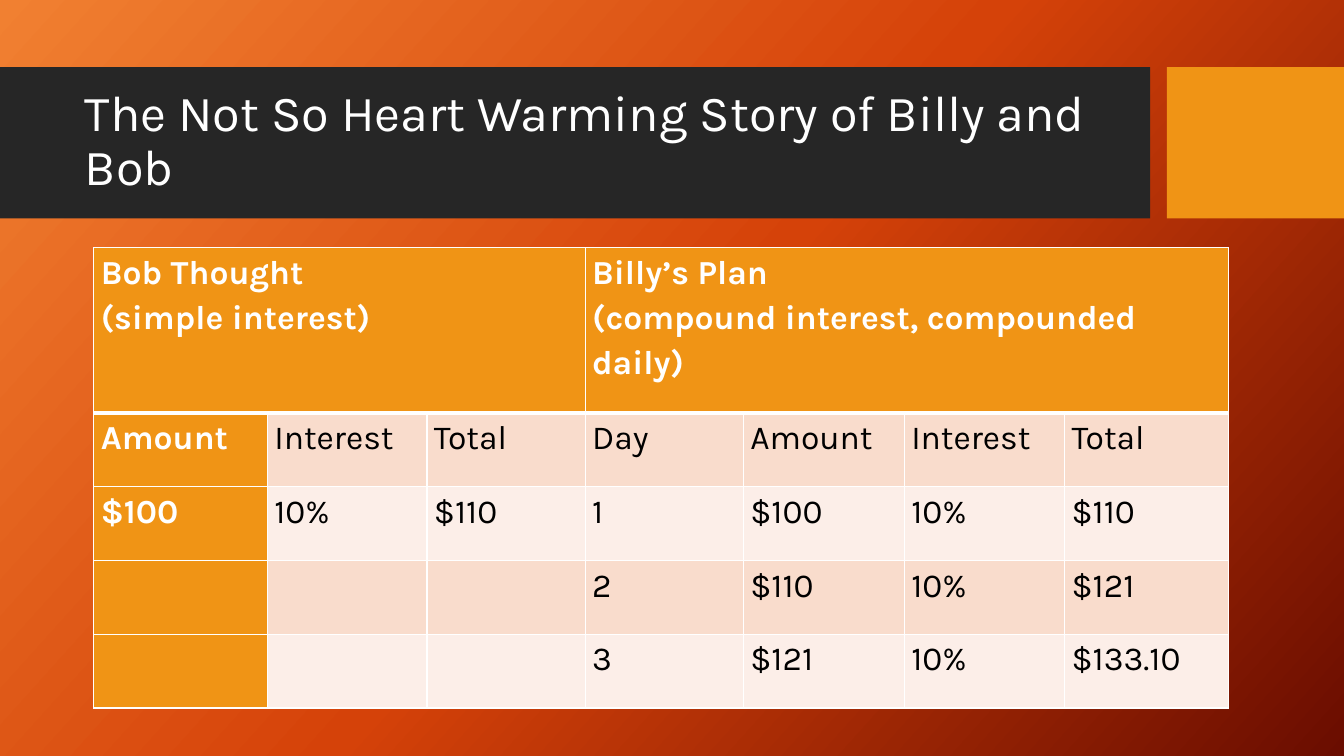
from copy import deepcopy
from typing import NamedTuple

from lxml.etree import SubElement as Sub
from pptx import Presentation
from pptx.dml.color import RGBColor as RGB
from pptx.enum.shapes import MSO_SHAPE as Shape
from pptx.enum.text import MSO_ANCHOR as Anchor, MSO_AUTO_SIZE as Auto, PP_ALIGN as Align
from pptx.oxml.ns import qn
from pptx.util import Pt

HUES = {
    "white": "FFFFFF", "black": "000000", "char": "262626", "gold": "F09415",
    "peach": "F9DCCC", "blush": "FCEEE8",
    "dawn": "F18031", "flame": "D54209", "ember": "6A0D00",
}
FONT = "Karla"
WIDTHS = [124, 114, 113, 113, 115, 114.5, 117]
HEIGHTS = [118] + [52.7] * 4
ROWS = [
    ["Amount", "Interest", "Total", "Day", "Amount", "Interest", "Total"],
    ["$100", "10%", "$110", "1", "$100", "10%", "$110"],
    ["", "", "", "2", "$110", "10%", "$121"],
    ["", "", "", "3", "$121", "10%", "$133.10"],
]


class Bar(NamedTuple):
    left: float
    width: float
    hue: str


class Head(NamedTuple):
    first: int
    last: int
    lines: list[str]


BARS = [Bar(0, 821.5, "char"), Bar(833.5, 126.5, "gold")]
HEADS = [
    Head(0, 2, ["Bob Thought", "(simple interest)"]),
    Head(3, 6, ["Billy’s Plan", "(compound interest, compounded daily)"]),
]


def tint(hue: str) -> RGB:
    return RGB.from_string(HUES[hue])


def write(para, text: str, size: float, hue: str, bold: bool, gap: float) -> None:
    para.line_spacing = gap
    para.alignment = Align.LEFT
    run = para.add_run()
    run.text = text
    font = run.font
    font.name, font.size, font.bold = FONT, Pt(size), bold
    font.color.rgb = tint(hue)


def paint(slide) -> None:
    fill = slide.background.fill
    fill.gradient()
    fill.gradient_angle = 318
    stops = next(slide.element.iter(qn("a:gsLst")))
    stops.insert(1, deepcopy(stops[0]))
    for stop, hue, spot in zip(fill.gradient_stops, ["dawn", "flame", "ember"], [0, 0.5, 1]):
        stop.color.rgb = tint(hue)
        stop.position = spot


def draw_bar(slide, bar: Bar) -> None:
    box = slide.shapes.add_shape(Shape.RECTANGLE, Pt(bar.left), Pt(48), Pt(bar.width), Pt(108))
    box.shadow.inherit = False
    box.fill.solid()
    box.fill.fore_color.rgb = tint(bar.hue)
    box.line.fill.background()


def set_title(slide, text: str) -> None:
    title = slide.shapes.title
    slide.shapes.element.append(title.element)
    title.left, title.top, title.width, title.height = Pt(53.5), Pt(59), Pt(756.5), Pt(85)
    frame = title.text_frame
    frame.word_wrap = True
    frame.auto_size = Auto.NONE
    frame.vertical_anchor = Anchor.MIDDLE
    write(frame.paragraphs[0], text, 36, "white", False, 0.9)


def edge(cell, row: int) -> None:
    props = cell._tc.get_or_add_tcPr()
    thick = {0: "B", 1: "T"}.get(row)
    for side in "LRTB":
        width = 3 if side == thick else 1
        line = Sub(props, qn(f"a:ln{side}"), w=str(Pt(width)))
        Sub(Sub(line, qn("a:solidFill")), qn("a:srgbClr"), val=HUES["white"])


def style(cell, row: int, col: int) -> None:
    edge(cell, row)
    cell.margin_left = cell.margin_right = Pt(5)
    cell.margin_top = cell.margin_bottom = 0
    cell.fill.solid()
    band = "peach" if row % 2 else "blush"
    cell.fill.fore_color.rgb = tint("gold" if row == 0 or col == 0 else band)


def fill_cell(cell, lines: list[str], bold: bool) -> None:
    frame = cell.text_frame
    for i, text in enumerate(lines):
        para = frame.add_paragraph() if i else frame.paragraphs[0]
        write(para, text, 24, "white" if bold else "black", bold, 1.15)


def draw_table(slide) -> None:
    table = slide.shapes.add_table(
        len(HEIGHTS), len(WIDTHS), Pt(67), Pt(177), Pt(sum(WIDTHS)), Pt(sum(HEIGHTS))
    ).table
    for col, width in zip(table.columns, WIDTHS):
        col.width = Pt(width)
    for row, height in zip(table.rows, HEIGHTS):
        row.height = Pt(height)
    for r in range(len(HEIGHTS)):
        for c in range(len(WIDTHS)):
            style(table.cell(r, c), r, c)
    for head in HEADS:
        cell = table.cell(0, head.first)
        cell.merge(table.cell(0, head.last))
        fill_cell(cell, head.lines, True)
    for r, texts in enumerate(ROWS, 1):
        for c, text in enumerate(texts):
            if text:
                fill_cell(table.cell(r, c), [text], c == 0)


def main() -> None:
    deck = Presentation()
    deck.slide_width, deck.slide_height = Pt(960), Pt(540)
    slide = deck.slides.add_slide(deck.slide_layouts[5])
    paint(slide)
    for bar in BARS:
        draw_bar(slide, bar)
    set_title(slide, "The Not So Heart Warming Story of Billy and Bob")
    draw_table(slide)
    deck.save("out.pptx")


if __name__ == "__main__":
    main()
